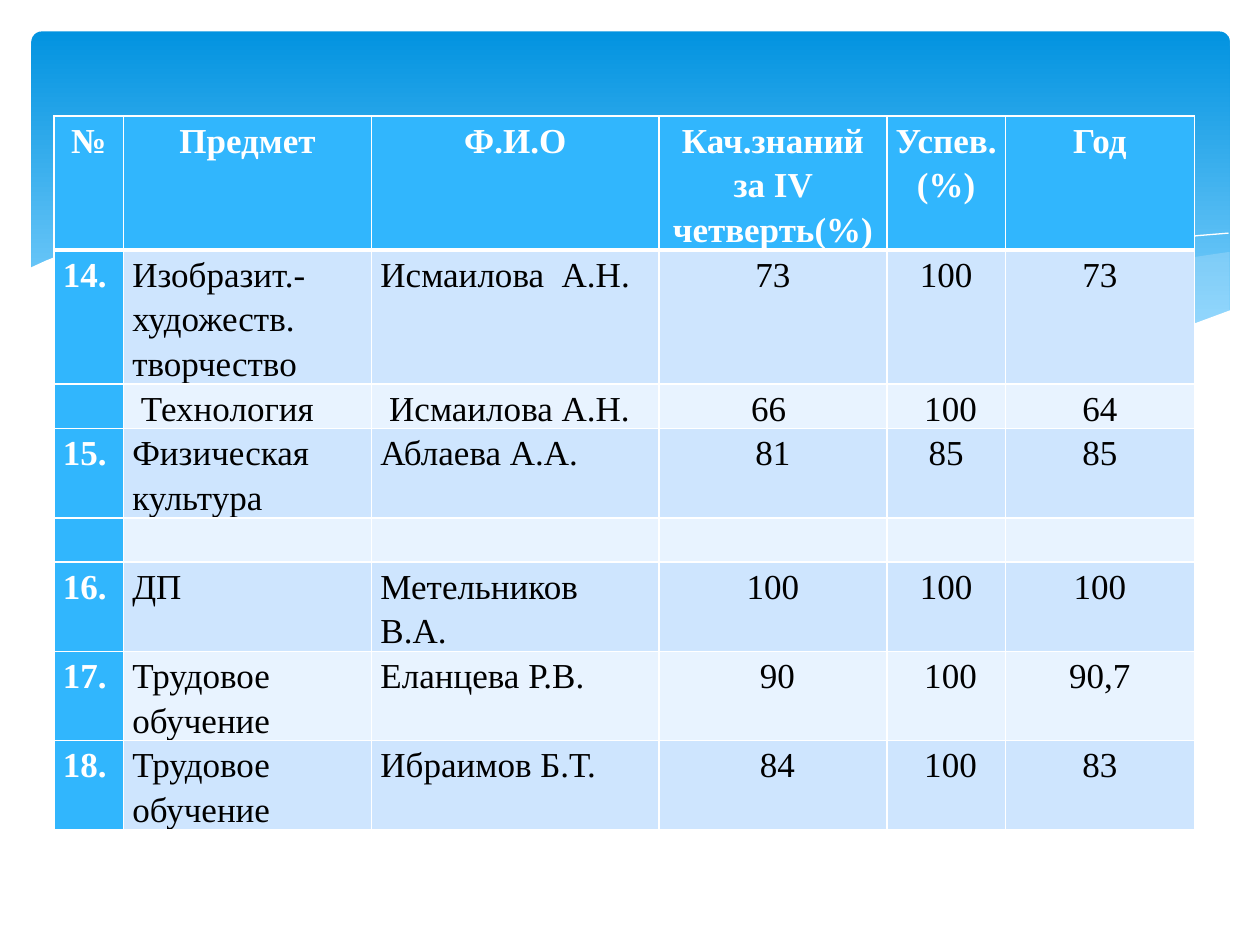
from dataclasses import dataclass
from lxml.etree import SubElement
from pptx import Presentation
from pptx.dml.color import RGBColor as Rgb
from pptx.enum.shapes import MSO_SHAPE as Shape
from pptx.enum.text import PP_ALIGN as Align
from pptx.oxml.ns import qn
from pptx.util import Inches, Pt


@dataclass(frozen=True)
class Theme:
    white: str = "FFFFFF"
    black: str = "000000"
    top: str = "0293E0"
    base: str = "83D3FE"
    wave: str = "C6E7FC"
    head: str = "31B6FD"
    odd: str = "CEE5FE"
    even: str = "E8F3FF"
    font: str = "Times New Roman"
    size: int = 20
    thin: int = 1
    thick: int = 3


THEME = Theme()

RIGHT = [
    (9.52, .16), (9.25, .2), (8.83, .29), (8.38, .39), (7.82, .53), (7.3, .64),
    (6.83, .73), (6.38, .81), (6.82, .87), (7.22, .91), (7.69, .93), (8.01, .94),
    (8.31, .92), (8.58, .9), (8.82, .85), (9.05, .79), (9.26, .73), (9.53, .63),
    (9.53, .16),
]
MIDDLE = [
    (8.7, .89), (8.14, .81), (7.52, .7), (6.83, .56), (6.06, .38), (5.61, .27),
    (5.18, .19), (4.79, .12), (4.42, .07), (3.97, .03), (3.57, .01), (3.21, .02),
    (2.9, .04), (2.63, .07), (3, .12), (3.39, .19), (3.81, .27), (4.26, .38),
    (5.07, .56), (5.78, .71), (6.27, .8), (6.72, .86), (7.13, .91), (7.5, .93),
    (7.84, .94), (8.15, .94), (8.44, .92),
]
LONG = [
    (2.86, .11), (3.21, .06), (3.51, .04), (3.93, .03), (4.46, .05), (5.1, .1),
    (5.85, .2), (6.42, .29), (7.04, .42), (7.72, .57), (8.46, .77), (8.84, .88),
]
SHORT = [
    (5.9, .73), (6.49, .57), (6.97, .45), (7.53, .32), (8.13, .2), (8.58, .12),
    (9.01, .06), (9.28, .03), (9.52, .01),
]
FRONT = [
    (9.54, .62), (9.27, .72), (8.97, .81), (8.64, .87), (8.27, .91), (7.86, .93),
    (7.38, .91), (6.85, .86), (6.25, .78), (5.56, .66), (4.8, .49), (4.24, .36),
    (3.68, .23), (3.17, .13), (2.69, .06), (2.27, .02), (1.88, 0), (1.54, 0),
    (1.23, .01), (.96, .03), (.72, .07), (.53, .11), (.36, .15), (.23, .19),
    (.13, .23), (0, .29), (0, 1.45), (9.54, 1.45),
]

COLS = [.55, 1.97, 2.28, 1.81, .94, 1.5]
LINES = [3, 3, 1, 2, 1, 2, 2, 2]
ROWS = [
    ["№", "Предмет", "Ф.И.О", "Кач.знаний за IV четверть(%)", "Успев. (%)", "Год"],
    ["14.", "Изобразит.-художеств. творчество", "Исмаилова  А.Н.", "73", "100", "73"],
    ["", " Технология", " Исмаилова А.Н.", "66 ", " 100", "64"],
    ["15.", "Физическая культура", "Аблаева А.А.", "81", "85", "85"],
    [""] * 6,
    ["16.", "ДП", "Метельников В.А.", "100", "100", "100"],
    ["17.", "Трудовое обучение", "Еланцева Р.В.", " 90", " 100", "90,7"],
    ["18.", "Трудовое обучение", "Ибраимов Б.Т.", " 84", " 100", "83"],
]


def color(name):
    return Rgb.from_string(name)


def add_panel(slide, left, top, width, height):
    panel = slide.shapes.add_shape(Shape.ROUNDED_RECTANGLE, left, top, width, height)
    panel.adjustments[0] = .03
    panel.shadow.inherit = False
    panel.line.fill.background()
    panel.fill.gradient()
    panel.fill.gradient_angle = 270
    stops = panel.fill.gradient_stops
    for stop, shade, place in zip(stops, (THEME.top, THEME.base), (0, .9)):
        stop.color.rgb = color(shade)
        stop.position = place


def add_curve(slide, left, top, points, fill=None, alpha=100):
    spots = [(left + Inches(x), top + Inches(y)) for x, y in points]
    pen = slide.shapes.build_freeform(*spots[0])
    pen.add_line_segments(spots[1:], close=fill is not None)
    curve = pen.convert_to_shape()
    curve.shadow.inherit = False
    if fill is None:
        curve.fill.background()
        curve.line.color.rgb = color(THEME.white)
        curve.line.width = Pt(0)
        return
    curve.line.fill.background()
    curve.fill.solid()
    curve.fill.fore_color.rgb = color(fill)
    if alpha < 100:
        tint = curve.fill._xPr.find(qn("a:solidFill"))[0]
        SubElement(tint, qn("a:alpha"), val=str(alpha * 1000))


def add_waves(slide, left, top):
    add_curve(slide, left, top, RIGHT, THEME.wave, 29)
    add_curve(slide, left, top, MIDDLE, THEME.wave, 40)
    add_curve(slide, left, top, LONG)
    add_curve(slide, left, top, SHORT)
    add_curve(slide, left, top, FRONT, THEME.white)


def set_edges(cell, row):
    props = cell._tc.get_or_add_tcPr()
    for side in "LRTB":
        thick = (row, side) in ((0, "B"), (1, "T"))
        width = Pt(THEME.thick if thick else THEME.thin)
        edge = SubElement(props, qn(f"a:ln{side}"), w=str(width))
        fill = SubElement(edge, qn("a:solidFill"))
        SubElement(fill, qn("a:srgbClr"), val=THEME.white)


def set_cell(cell, text, row, col):
    bold = row == 0 or col == 0
    set_edges(cell, row)
    cell.fill.solid()
    band = THEME.odd if row % 2 else THEME.even
    cell.fill.fore_color.rgb = color(THEME.head if bold else band)
    cell.margin_left = cell.margin_right = Inches(.07 if row else .06)
    cell.margin_top = cell.margin_bottom = 0
    cell.text_frame.text = text
    para = cell.text_frame.paragraphs[0]
    para.line_spacing = 1.15
    para.alignment = Align.CENTER if row == 0 or col > 2 else Align.LEFT
    for run in para.runs:
        font = run.font
        font.name, font.size, font.bold = THEME.font, Pt(THEME.size), bold
        font.color.rgb = color(THEME.white if bold else THEME.black)


def add_marks(slide, left, top, width, line):
    frame = slide.shapes.add_table(
        len(ROWS), len(COLS), left, top, width, line * sum(LINES))
    table = frame.table
    table.first_col = True
    for col, size in zip(table.columns, COLS):
        col.width = Inches(size)
    for row, count in zip(table.rows, LINES):
        row.height = line * count
    for r, texts in enumerate(ROWS):
        for c, text in enumerate(texts):
            set_cell(table.cell(r, c), text, r, c)


def main():
    deck = Presentation()
    deck.slide_width, deck.slide_height = Inches(10), Inches(7.5)
    slide = deck.slides.add_slide(deck.slide_layouts[6])
    add_panel(slide, Inches(.25), Inches(.25), Inches(9.51), Inches(2.7))
    add_waves(slide, Inches(.23), Inches(1.84))
    add_marks(slide, Inches(.43), Inches(.92), Inches(sum(COLS)), Inches(.35))
    deck.save("out.pptx")


if __name__ == "__main__":
    main()
